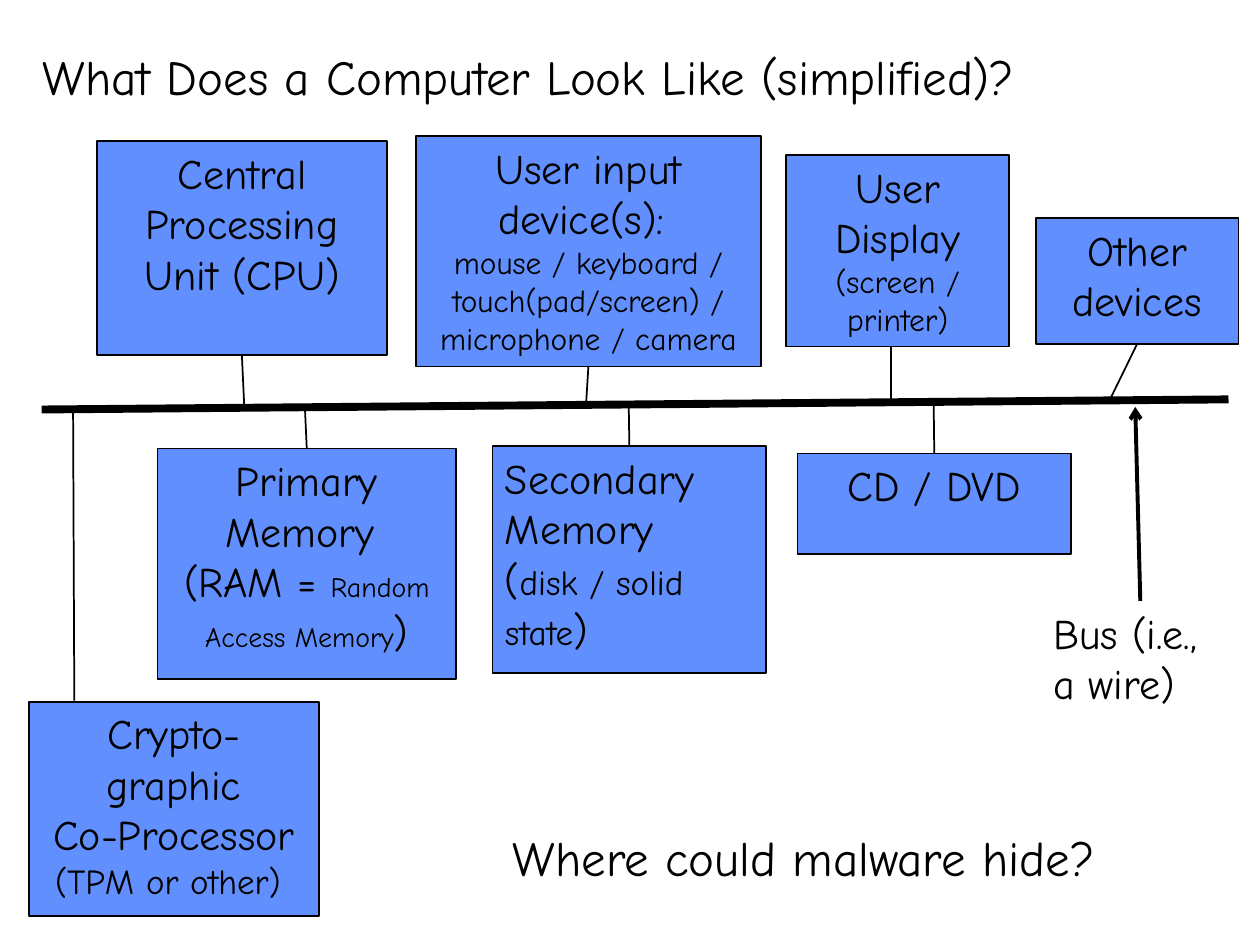
from lxml import etree
from pptx import Presentation
from pptx.dml.color import RGBColor
from pptx.enum.shapes import MSO_CONNECTOR, MSO_SHAPE
from pptx.enum.text import MSO_ANCHOR, PP_ALIGN
from pptx.oxml.ns import qn
from pptx.util import Inches, Pt

LEFT, CENTER = PP_ALIGN.LEFT, PP_ALIGN.CENTER
TOP, MIDDLE = MSO_ANCHOR.TOP, MSO_ANCHOR.MIDDLE
TOP_SIDE, BOTTOM_SIDE = 0, 2
FONT = "Comic Neue"
COLORS = {"text": "000000", "line": "000000", "box": "618FFD"}


def rgb(name):
    return RGBColor.from_string(COLORS[name])


def write_text(shape, paragraphs, size=24, align=LEFT, anchor=TOP):
    """Each paragraph is a list of runs; a run is a string or (string, size)."""
    tf = shape.text_frame
    tf.word_wrap = True
    tf.vertical_anchor = anchor
    for i, runs in enumerate(paragraphs):
        p = tf.paragraphs[0] if i == 0 else tf.add_paragraph()
        p.alignment = align
        for run in runs:
            text, run_size = (run, size) if isinstance(run, str) else run
            r = p.add_run()
            r.text = text
            r.font.name = FONT
            r.font.size = Pt(run_size)
            r.font.color.rgb = rgb("text")


class Diagram:
    def __init__(self, slide):
        self.s = slide

    def title(self, text, at):
        sp = self.s.shapes.title
        sp.left, sp.top, sp.width, sp.height = map(Inches, at)
        write_text(sp, [[text]], size=28, anchor=MIDDLE)

    def label(self, text, at, **fmt):
        sp = self.s.shapes.add_textbox(*map(Inches, at))
        write_text(sp, [[text]], **fmt)
        return sp

    def box(self, paragraphs, at, align=CENTER):
        sp = self.s.shapes.add_shape(MSO_SHAPE.RECTANGLE, *map(Inches, at))
        sp.shadow.inherit = False
        sp.fill.solid()
        sp.fill.fore_color.rgb = rgb("box")
        sp.line.color.rgb = rgb("line")
        sp.line.width = Pt(1)
        write_text(sp, paragraphs, align=align)
        return sp

    def line(self, start, end, width=1, joined=None, arrow=False):
        """joined is the (shape, side) at which the line starts."""
        cx = self.s.shapes.add_connector(
            MSO_CONNECTOR.STRAIGHT, *map(Inches, start + end))
        if joined:
            cx.begin_connect(*joined)
        cx.line.color.rgb = rgb("line")
        cx.line.width = Pt(width)
        if arrow:
            etree.SubElement(cx.line._get_or_add_ln(), qn("a:tailEnd"), type="arrow")
        etree.SubElement(cx._element.spPr, qn("a:effectLst"))


def main():
    prs = Presentation()
    prs.slide_width, prs.slide_height = Inches(10), Inches(7.5)
    d = Diagram(prs.slides.add_slide(prs.slide_layouts[5]))

    d.title("Where could malware hide?", (3.97, 6.48, 5.5, 0.65))
    d.label("What Does a Computer Look Like (simplified)?",
            (0.24, 0.17, 9.57, 0.86), size=28, anchor=MIDDLE)

    cpu = d.box([["Central Processing Unit (CPU)"]], (0.77, 1.12, 2.3, 1.7))
    primary = d.box([["Primary Memory "],
                     ["(RAM = ", ("Random Access Memory", 16), ")"]],
                    (1.25, 3.56, 2.37, 1.83))
    secondary = d.box([["Secondary Memory"],
                       ["(", ("disk / solid state", 20), ")"]],
                      (3.91, 3.54, 2.17, 1.8), align=LEFT)
    disc = d.box([["CD / DVD"]], (6.33, 3.6, 2.17, 0.8))
    user_input = d.box(
        [["User input device(s): "],
         [("mouse / keyboard / touch(pad/screen) / microphone / camera", 18)]],
        (3.3, 1.08, 2.74, 1.83))
    d.box([["User Display"], [("(screen / printer)", 18)]],
          (6.24, 1.23, 1.77, 1.52))
    other = d.box([["Other devices"]], (8.22, 1.73, 1.61, 1))
    d.box([["Crypto-graphic"], ["Co-Processor"], [("(TPM or other) ", 20)]],
          (0.23, 5.57, 2.3, 1.7))

    d.line((0.33, 3.25), (9.75, 3.17), width=4.5)
    bus_label = d.label("Bus (i.e., a wire)", (8.26, 4.77, 1.58, 0.91))
    d.line((9.05, 4.77), (9.01, 3.23), width=2.25,
           joined=(bus_label, TOP_SIDE), arrow=True)

    for start, end, joined in [
        ((1.92, 2.82), (1.94, 3.25), (cpu, BOTTOM_SIDE)),
        ((4.67, 2.91), (4.65, 3.23), (user_input, BOTTOM_SIDE)),
        ((7.07, 2.75), (7.07, 3.18), None),
        ((9.02, 2.73), (8.81, 3.17), (other, BOTTOM_SIDE)),
        ((2.44, 3.56), (2.42, 3.23), (primary, TOP_SIDE)),
        ((4.99, 3.54), (4.99, 3.2), (secondary, TOP_SIDE)),
        ((7.41, 3.6), (7.41, 3.18), (disc, TOP_SIDE)),
        ((0.59, 5.56), (0.58, 3.24), None),
    ]:
        d.line(start, end, joined=joined)

    prs.save("out.pptx")


if __name__ == "__main__":
    main()
